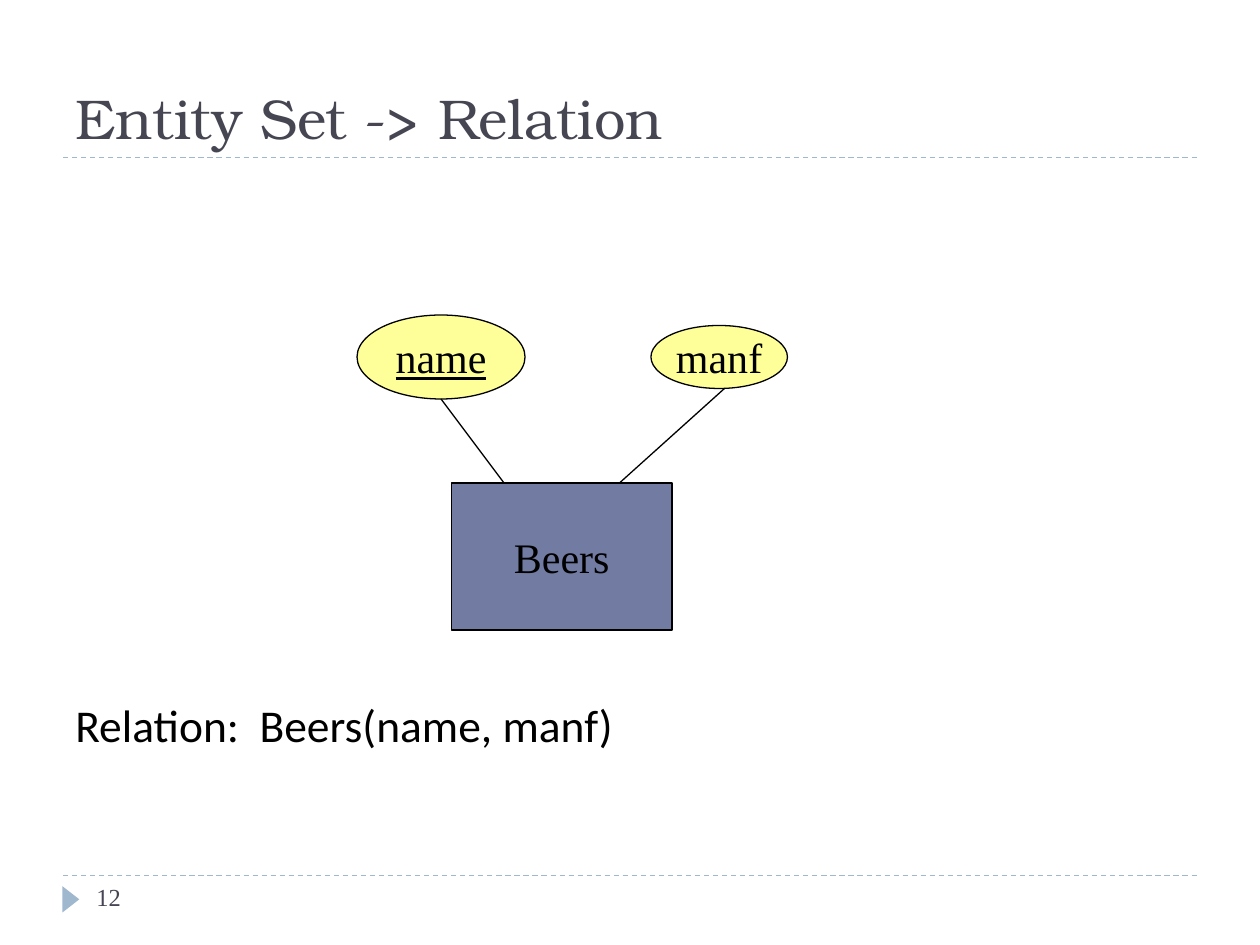
from lxml import etree
from pptx import Presentation
from pptx import util as u
from pptx.dml.color import RGBColor
from pptx.enum import dml, shapes, text
from pptx.oxml.ns import qn

COLORS = {"ink": "000000", "title": "464653", "accent": "9FB8CD",
          "entity": "727CA3", "attribute": "FFFF99"}
SERIF, SANS, DISPLAY = "Times New Roman", "Calibri", "TeX Gyre Bonum"
COLUMNS, ROWS = 120, 90
CELL = u.Inches(10) // COLUMNS


def color(name):
    return RGBColor.from_string(COLORS[name])


def place(box, left, top, *size):
    """Turn grid cells inside a box into slide lengths."""
    cells = (box[0] + left, box[1] + top, *size)
    return [round(cell * CELL) for cell in cells]


def write(shape, words, font=SERIF, size=24, ink="ink", underline=None,
          align=text.PP_ALIGN.LEFT, anchor=text.MSO_ANCHOR.MIDDLE, wrap=True):
    frame = shape.text_frame
    frame.word_wrap = wrap
    frame.auto_size = text.MSO_AUTO_SIZE.NONE
    frame.vertical_anchor = anchor
    para = frame.paragraphs[0]
    para.alignment = align
    span = para.add_run()
    span.text = words
    span.font.name, span.font.size = font, u.Pt(size)
    span.font.underline = underline
    span.font.color.rgb = color(ink)


def add_line(page, box, start, end, ink="ink", dashed=False):
    line = page.shapes.add_connector(
        shapes.MSO_CONNECTOR.STRAIGHT, *place(box, *start), *place(box, *end))
    line.line.color.rgb = color(ink)
    line.line.width = u.Pt(0.75)
    if dashed:
        line.line.dash_style = dml.MSO_LINE.DASH
    etree.SubElement(line._element.spPr, qn("a:effectLst"))


def add_node(page, box, kind, cells, words, fill, underline=None):
    node = page.shapes.add_shape(kind, *place(box, *cells))
    node.shadow.inherit = False
    node.fill.solid()
    node.fill.fore_color.rgb = color(fill)
    node.line.color.rgb = color("ink")
    node.line.width = u.Pt(0.75)
    write(node, words, underline=underline,
          align=text.PP_ALIGN.CENTER, wrap=False)


def add_header(page, box, words):
    width, height = box[2:]
    add_line(page, box, (0, height), (width, height), "accent", dashed=True)
    title = page.shapes.title
    title.left, title.top, title.width, title.height = place(box, 0, 0, width, height)
    write(title, words, font=DISPLAY, size=32, ink="title",
          anchor=text.MSO_ANCHOR.BOTTOM)


def add_footer(page, box, number):
    add_line(page, box, (0, 0), (box[2], 0), "accent", dashed=True)
    # Marker pointing right, beside the page number
    marker = page.shapes.add_shape(
        shapes.MSO_SHAPE.ISOSCELES_TRIANGLE, *place(box, -0.5, 1.45, 2.5, 1.6))
    marker.rotation = 90
    marker.shadow.inherit = False
    marker.fill.solid()
    marker.fill.fore_color.rgb = color("accent")
    marker.line.fill.background()
    label = page.shapes.add_textbox(*place(box, 2, 0, 26, box[3]))
    write(label, number, size=14, ink="title", anchor=text.MSO_ANCHOR.TOP)


def add_diagram(page, box):
    oval, rectangle = shapes.MSO_SHAPE.OVAL, shapes.MSO_SHAPE.RECTANGLE
    add_node(page, box, rectangle, (9, 16, 21, 14), "Beers", "entity")
    add_node(page, box, oval, (0, 0, 16, 8), "name", "attribute", underline=True)
    add_node(page, box, oval, (28, 1, 13, 6), "manf", "attribute")
    # Links from the attributes to the entity set
    add_line(page, box, (8, 8), (14, 16))
    add_line(page, box, (35, 7), (25, 16))


def add_relation(page, box, words):
    label = page.shapes.add_textbox(*place(box, 0, 0, *box[2:]))
    write(label, words, font=SANS, size=26)


def main():
    deck = Presentation()
    deck.slide_width, deck.slide_height = COLUMNS * CELL, ROWS * CELL
    page = deck.slides.add_slide(deck.slide_layouts.get_by_name("Title Only"))
    add_header(page, (6, 2, 108, 13), "Entity Set -> Relation")
    add_diagram(page, (34, 30, 41, 30))
    add_relation(page, (6, 65, 108, 8), "Relation:  Beers(name, manf)")
    add_footer(page, (6, 83.4, 108, 4.8), "12")
    deck.save("out.pptx")


if __name__ == "__main__":
    main()
